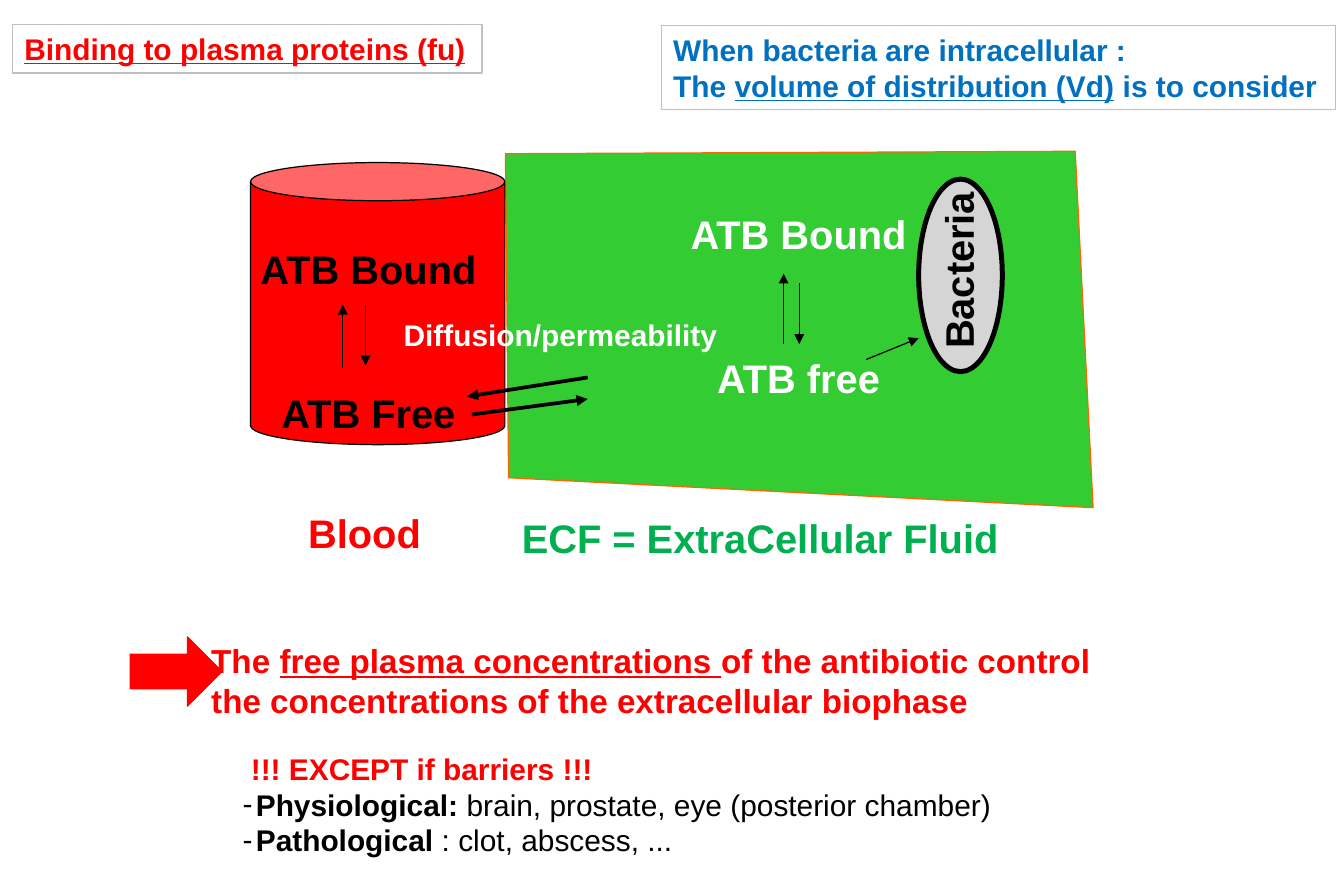
from lxml import etree
from pptx import Presentation
from pptx.dml.color import RGBColor
from pptx.enum.shapes import MSO_CONNECTOR as Connector, MSO_SHAPE as Preset
from pptx.enum.text import MSO_ANCHOR as Anchor, PP_ALIGN as Align
from pptx.oxml.ns import qn
from pptx.util import Pt

COLORS = {
    "red": "FF0000", "green": "33CC33", "dark green": "00B050", "blue": "0070C0",
    "orange": "FF6600", "grey": "D5D5D5", "silver": "C0C0C0",
    "black": "000000", "white": "FFFFFF",
}


def paint(shape, fill, line, width=0.75):
    shape.shadow.inherit = False
    if fill:
        shape.fill.solid()
        shape.fill.fore_color.rgb = RGBColor.from_string(COLORS[fill])
    else:
        shape.fill.background()
    shape.line.color.rgb = RGBColor.from_string(COLORS[line])
    shape.line.width = Pt(width)


def write(box, paragraphs, size, color, align=Align.LEFT, gap=0, wrap=False):
    """Fill a box with bold paragraphs; text between underscores is underlined."""
    frame = box.text_frame
    frame.word_wrap = wrap
    for index, text in enumerate(paragraphs):
        para = frame.add_paragraph() if index else frame.paragraphs[0]
        para.alignment = align
        para.space_before = Pt(gap if index else 0)
        para.font.name = "Arial"
        para.font.size = Pt(size)
        para.font.bold = True
        para.font.color.rgb = RGBColor.from_string(COLORS[color])
        for part, words in enumerate(text.split("_")):
            if words:
                span = para.add_run()
                span.text = words
                if part % 2:
                    span.font.underline = True


deck = Presentation()
deck.slide_width, deck.slide_height = Pt(810), Pt(540)
page = deck.slides.add_slide(deck.slide_layouts[1])
shapes = page.shapes

# Conclusion
title = shapes.title
title.left, title.top, title.width, title.height = Pt(123), Pt(382.3), Pt(571.7), Pt(55.4)
write(title, ["The _free plasma concentrations _of the antibiotic control "
              "the concentrations of the extracellular biophase"], 20, "red", wrap=True)
title.text_frame.vertical_anchor = Anchor.MIDDLE
title.text_frame.margin_left = title.text_frame.margin_right = Pt(4.3)

# Exceptions
body = page.placeholders[1]
body.left, body.top, body.width, body.height = Pt(139), Pt(448.6), Pt(520), Pt(72.7)
body.text_frame.word_wrap = True
exceptions = [
    (" !!! EXCEPT if barriers !!!", "", "red"),
    ("Physiological: ", "brain, prostate, eye (posterior chamber)", "black"),
    ("Pathological ", ": clot, abscess, ...", "black"),
]
for index, (lead, detail, color) in enumerate(exceptions):
    para = body.text_frame.add_paragraph() if index else body.text_frame.paragraphs[0]
    para.space_before = Pt(0)
    properties = para._p.get_or_add_pPr()
    properties.set("marL", str(Pt(8)))
    properties.set("indent", str(-Pt(8)))
    if detail:
        etree.SubElement(properties, qn("a:buChar")).set("char", "-")
    else:
        etree.SubElement(properties, qn("a:buNone"))
    para.font.name = "Arial"
    para.font.size = Pt(18)
    para.font.color.rgb = RGBColor.from_string(COLORS[color])
    for words, bold in ((lead, True), (detail, False)):
        if words:
            span = para.add_run()
            span.text = words
            span.font.bold = bold

# Compartments
outline = shapes.build_freeform(Pt(304.6), Pt(92.7))
outline.add_line_segments([(Pt(x), Pt(y)) for x, y in
                           [(648, 91.2), (658.8, 306), (306.5, 288)]], close=True)
paint(outline.convert_to_shape(), "green", "orange")

blood = shapes.add_shape(Preset.CAN, Pt(151), Pt(98), Pt(153.3), Pt(170))
blood.adjustments[0] = 0.15
paint(blood, "red", "black")

bacterium = shapes.add_shape(Preset.OVAL, Pt(553.7), Pt(108), Pt(50.4), Pt(116))
paint(bacterium, "grey", "black", 3)

pointer = shapes.add_shape(Preset.RIGHT_ARROW, Pt(78.5), Pt(383.8), Pt(55.4), Pt(41.8))
paint(pointer, "red", "red")

# Labels: paragraphs, left, top, width, height, size, colour, alignment, gap, rotation
labels = [
    (["ATB Bound", "ATB Free"], 149, 144, 146.2, 123.8, 24, "black", Align.CENTER, 58, 0),
    (["ATB Bound", "ATB free"], 408.2, 123, 146.2, 123.8, 24, "white", Align.CENTER, 58, 0),
    (["ECF = ExtraCellular Fluid"], 307.4, 306, 311, 36, 24, "dark green", Align.LEFT, 0, 0),
    (["Diffusion/permeability"], 236.2, 187.2, 237.6, 52.6, 18, "white", Align.LEFT, 0, 0),
    (["Bacteria"], 522.7, 144.7, 109.4, 36, 24, "black", Align.LEFT, 0, 270),
    (["Blood"], 178.6, 303.1, 82.8, 36, 24, "red", Align.LEFT, 0, 0),
]
for words, left, top, width, height, size, color, align, gap, rotation in labels:
    box = shapes.add_textbox(Pt(left), Pt(top), Pt(width), Pt(height))
    box.rotation = rotation
    write(box, words, size, color, align, gap)

# Framed headings
headings = [
    (["_Binding to plasma proteins (fu)_"], 7.6, 14.8, 283, 29.2, "red"),
    (["When bacteria are intracellular :",
      "The _volume of distribution (Vd)_ is to consider"], 398.6, 15.4, 406.4, 50.8, "blue"),
]
for words, left, top, width, height, color in headings:
    frame = shapes.add_shape(Preset.RECTANGLE, Pt(left), Pt(top), Pt(width), Pt(height))
    paint(frame, None, "silver")
    frame.text_frame.vertical_anchor = Anchor.TOP
    write(frame, words, 18, color)

# Exchange arrows: start, end, width
arrows = [
    ((522, 216.7), (553.7, 203.8), 0.75),
    ((354.2, 227.5), (281.5, 239), 2.25),
    ((284.4, 249.8), (354.2, 240.5), 2.25),
    ((472.3, 207.4), (472.3, 164.9), 0.75),
    ((481.7, 170.6), (481.7, 207.4), 0.75),
    ((206.6, 221.8), (206.6, 183.6), 0.75),
    ((220.3, 183.6), (220.3, 220.3), 0.75),
]
for start, end, width in arrows:
    arrow = shapes.add_connector(Connector.STRAIGHT, *map(Pt, start + end))
    arrow.line.color.rgb = RGBColor.from_string(COLORS["black"])
    arrow.line.width = Pt(width)
    etree.SubElement(arrow.line._get_or_add_ln(), qn("a:tailEnd")).set("type", "triangle")
    etree.SubElement(arrow._element.spPr, qn("a:effectLst"))

deck.save("out.pptx")
